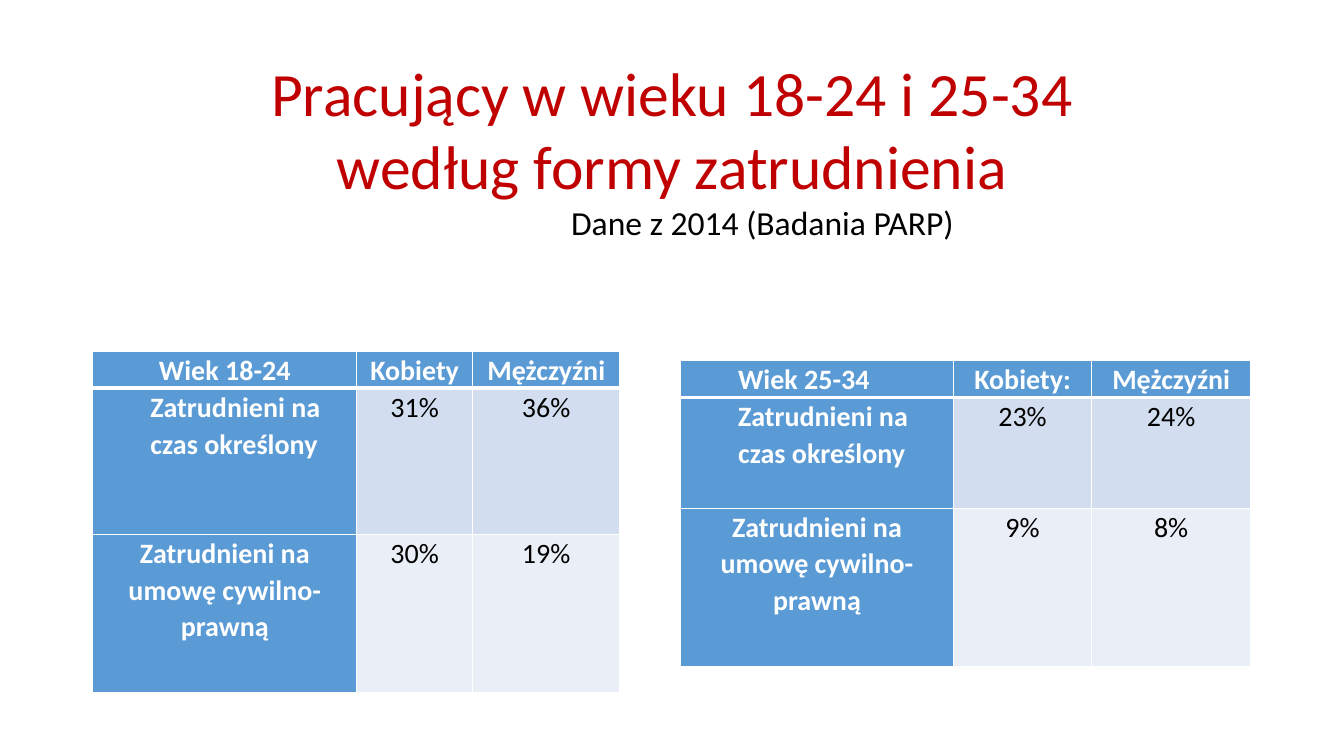
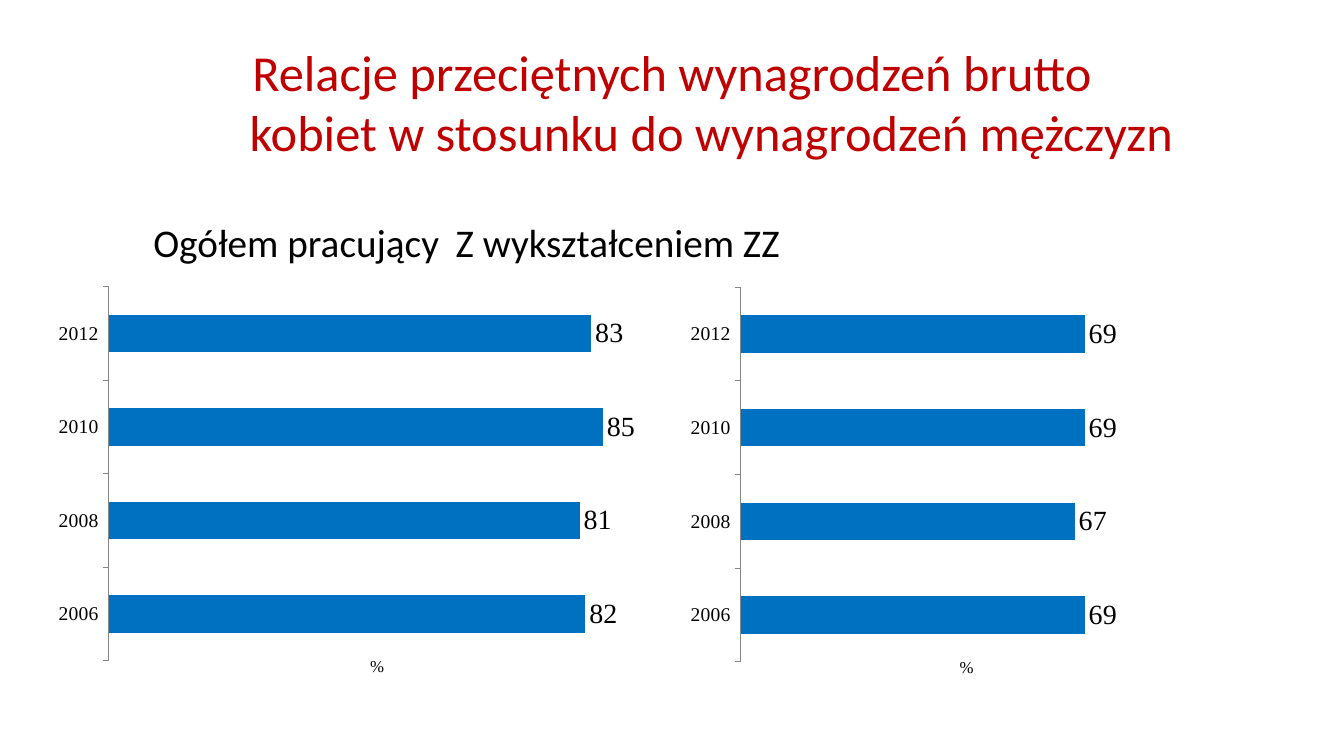
from dataclasses import dataclass

from lxml import etree
from pptx import Presentation
from pptx.chart.data import CategoryChartData
from pptx.dml.color import RGBColor
from pptx.enum import chart as ch, text
from pptx.oxml import ns
from pptx.util import Cm, Pt

RED, BLACK, WHITE, GREY = "C00000", "000000", "FFFFFF", "868686"
HEAD_BLUE, BAR_BLUE = "5B9BD5", "0070C0"
BANDS = ("D2DEEF", "EAEFF7")
SANS, SERIF = "Calibri", "Times New Roman"
CENTER, LEFT = text.PP_ALIGN.CENTER, text.PP_ALIGN.LEFT
TITLE_LEFT, TITLE_TOP, TITLE_WIDTH = 2.34, 1.02, 29.21
CELL_INDENT = 1.27


@dataclass
class TitleLine:
    text: str
    size: float
    color: str = RED
    indent: float = 0
    before: float = 0
    tabs: tuple[float, ...] = ()


@dataclass
class AgeTable:
    left: float
    top: float
    cols: tuple[float, ...]
    rows: tuple[float, ...]
    header: tuple[str, ...]
    head_indent: float
    fixed_term: tuple[str, str]
    civil_law: tuple[str, str]


@dataclass
class PayChart:
    left: float
    top: float
    width: float
    plot_x: float
    values: tuple[int, ...]


TABLES = (
    AgeTable(2.34, 8.86, (6.65, 2.92, 3.71), (0.92, 3.68, 3.99),
             ("Wiek 18-24", "Kobiety", "Mężczyźni"), 0,
             ("31%", "36%"), ("30%", "19%")),
    AgeTable(17.15, 9.09, (6.88, 3.48, 4.01), (0.92, 2.79, 3.99),
             ("Wiek 25-34", "Kobiety:", "Mężczyźni"), CELL_INDENT,
             ("23%", "24%"), ("9%", "8%")),
)
YEARS = ("2012", "2010", "2008", "2006")
CHARTS = (
    PayChart(1.14, 6.25, 16.79, 0.095, (83, 85, 81, 82)),
    PayChart(17.15, 6.27, 14.4, 0.105, (69, 69, 67, 69)),
)


def rgb(color: str) -> RGBColor:
    return RGBColor.from_string(color)


def set_font(font, size: float, color: str, name: str = SANS, bold: bool = False) -> None:
    font.size, font.name, font.bold = Pt(size), name, bold
    font.color.rgb = rgb(color)


def set_indent(p, indent: float) -> None:
    pPr = p._p.get_or_add_pPr()
    pPr.set("marL", str(Cm(indent)))
    pPr.set("indent", "0")


def add_titled_slide(prs, height: float, top_inset: float, lines: list[TitleLine]):
    s = prs.slides.add_slide(prs.slide_layouts[5])
    sp = s.shapes.title
    sp.left, sp.top = Cm(TITLE_LEFT), Cm(TITLE_TOP)
    sp.width, sp.height = Cm(TITLE_WIDTH), Cm(height)
    tf = sp.text_frame
    tf.word_wrap, tf.auto_size = True, text.MSO_AUTO_SIZE.NONE
    tf.vertical_anchor = text.MSO_ANCHOR.TOP
    tf.margin_top, tf.margin_bottom = Cm(top_inset), 0
    tf.text = "\n".join(line.text for line in lines)
    for p, line in zip(tf.paragraphs, lines):
        p.alignment = LEFT if line.tabs else CENTER
        p.line_spacing = 0.98
        p.space_before, p.space_after = Pt(line.before), Pt(0)
        set_indent(p, line.indent)
        if line.tabs:
            tab_list = etree.SubElement(p._p.get_or_add_pPr(), ns.qn("a:tabLst"))
            for pos in line.tabs:
                etree.SubElement(tab_list, ns.qn("a:tab"), pos=str(Cm(pos)), algn="l")
        for r in p.runs:
            set_font(r.font, line.size, line.color)
    return s


def set_borders(cell, bottom: float) -> None:
    """Draw white 1 pt borders, with a bottom border of the given points."""
    tcPr = cell._tc.get_or_add_tcPr()
    for side, width in (("L", 1), ("R", 1), ("T", 1), ("B", bottom)):
        ln = etree.SubElement(tcPr, ns.qn(f"a:ln{side}"), w=str(Pt(width)))
        fill = etree.SubElement(ln, ns.qn("a:solidFill"))
        etree.SubElement(fill, ns.qn("a:srgbClr"), val=WHITE)


def add_age_table(s, t: AgeTable) -> None:
    rows = (t.header,
            ("Zatrudnieni na czas określony", *t.fixed_term),
            ("Zatrudnieni na umowę cywilno-prawną", *t.civil_law))
    table = s.shapes.add_table(len(rows), len(t.cols), Cm(t.left), Cm(t.top),
                               Cm(sum(t.cols)), Cm(sum(t.rows))).table
    table.first_col = True
    for col, width in zip(table.columns, t.cols):
        col.width = Cm(width)
    for row, height in zip(table.rows, t.rows):
        row.height = Cm(height)
    label_indents = (t.head_indent, CELL_INDENT, 0)
    for i, values in enumerate(rows):
        for j, value in enumerate(values):
            cell = table.cell(i, j)
            is_head = i == 0 or j == 0
            set_borders(cell, 3 if i == 0 else 1)
            cell.fill.solid()
            cell.fill.fore_color.rgb = rgb(HEAD_BLUE if is_head else BANDS[i - 1])
            cell.margin_left = cell.margin_right = Cm(0.18)
            cell.margin_top = cell.margin_bottom = 0
            cell.text_frame.text = value
            p = cell.text_frame.paragraphs[0]
            indent = label_indents[i] if j == 0 else 0
            set_indent(p, indent)
            p.alignment = LEFT if indent else CENTER
            p.line_spacing = 1.07
            set_font(p.runs[0].font, 20, WHITE if is_head else BLACK, bold=is_head)


def set_layout(parent, index: int, **settings) -> None:
    """Give a chart part a manual layout, in fractions of the chart."""
    for old in parent.findall(ns.qn("c:layout")):
        parent.remove(old)
    layout = etree.Element(ns.qn("c:layout"))
    manual = etree.SubElement(layout, ns.qn("c:manualLayout"))
    for name, value in settings.items():
        etree.SubElement(manual, ns.qn(f"c:{name}"), val=str(value))
    parent.insert(index, layout)


def add_pay_chart(s, c: PayChart) -> None:
    data = CategoryChartData()
    data.categories = YEARS
    data.add_series("Series 1", c.values)
    chart = s.shapes.add_chart(ch.XL_CHART_TYPE.BAR_CLUSTERED, Cm(c.left), Cm(c.top),
                               Cm(c.width), Cm(10.9), data).chart
    chart.has_title = chart.has_legend = False
    set_font(chart.font, 10, BLACK)

    plot = chart.plots[0]
    plot.gap_width, plot.vary_by_categories = 150, False
    fill = plot.series[0].format.fill
    fill.solid()
    fill.fore_color.rgb = rgb(BAR_BLUE)
    plot.has_data_labels = True
    labels = plot.data_labels
    labels.show_value = True
    labels.position = ch.XL_LABEL_POSITION.OUTSIDE_END
    set_font(labels.font, 20, BLACK, SERIF)

    years = chart.category_axis
    years.reverse_order = True
    years.has_major_gridlines = False
    years.major_tick_mark = ch.XL_TICK_MARK.OUTSIDE
    years.format.line.color.rgb = rgb(GREY)
    years.format.line.width = Pt(0.75)
    set_font(years.tick_labels.font, 14, BLACK, SERIF)

    percent = chart.value_axis
    percent.minimum_scale, percent.maximum_scale = 0, 100
    percent.has_major_gridlines = False
    percent.major_tick_mark = ch.XL_TICK_MARK.NONE
    percent.tick_label_position = ch.XL_TICK_LABEL_POSITION.NONE
    percent.format.line.fill.background()
    tf = percent.axis_title.text_frame
    tf.text = "%"
    set_font(tf.paragraphs[0].runs[0].font, 12, BLACK, SERIF)

    set_layout(percent.axis_title._element, 1, xMode="edge", yMode="edge", x=0.483, y=0.945)
    set_layout(chart._chartSpace.chart.plotArea, 0, layoutTarget="inner", xMode="edge",
               yMode="edge", x=c.plot_x, y=0.09, w=0.873, h=0.874)


def main() -> None:
    prs = Presentation()
    prs.slide_width, prs.slide_height = Cm(33.87), Cm(19.05)

    s = add_titled_slide(prs, 3.68, 0.46, [
        TitleLine("Pracujący w wieku 18-24 i 25-34", 44),
        TitleLine("według formy zatrudnienia", 44),
        TitleLine("Dane z 2014 (Badania PARP)", 24, BLACK, indent=4.54),
    ])
    for age_table in TABLES:
        add_age_table(s, age_table)

    s = add_titled_slide(prs, 5.69, 0.1, [
        TitleLine("Relacje przeciętnych wynagrodzeń brutto", 36),
        TitleLine("kobiet w stosunku do wynagrodzeń mężczyzn", 36, indent=1.97),
        TitleLine("\tOgółem pracujący\tZ wykształceniem ZZ", 28, BLACK,
                  before=41, tabs=(4.21, 16.31)),
    ])
    for pay_chart in CHARTS:
        add_pay_chart(s, pay_chart)

    prs.save("out.pptx")


if __name__ == "__main__":
    main()
